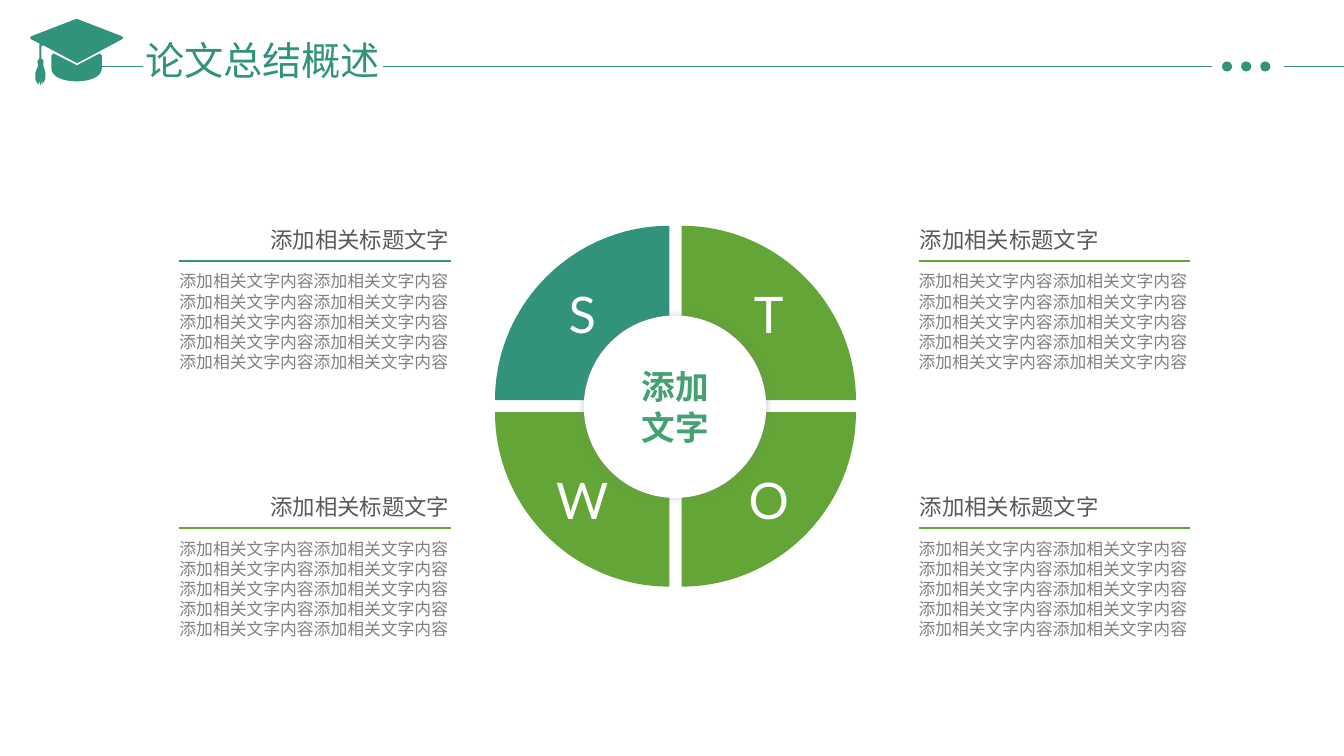
"""Build a SWOT summary slide with a four-part ring and four text blocks."""
import pptx
import pptx.dml.color
import pptx.enum.shapes
import pptx.enum.text
import pptx.oxml
import pptx.oxml.ns
import pptx.util

Inches = pptx.util.Inches
Pt = pptx.util.Pt
RGBColor = pptx.dml.color.RGBColor
ALIGN = pptx.enum.text.PP_ALIGN
OVAL = pptx.enum.shapes.MSO_SHAPE.OVAL

TEAL = RGBColor(0x31, 0x93, 0x7B)
GREEN = RGBColor(0x63, 0xA5, 0x37)
CENTRE_GREEN = RGBColor(0x43, 0xA1, 0x72)
WHITE = RGBColor(0xFF, 0xFF, 0xFF)
DARK_GREY = RGBColor(0x59, 0x59, 0x59)
GREY = RGBColor(0x80, 0x80, 0x80)

TITLE = "论文总结概述"
CENTRE_LINES = ["添加", "文字"]
HEADING = "添加相关标题文字"
BODY_LINES = ["添加相关文字内容添加相关文字内容"] * 5

QUADRANTS = [("S", -1, -1, TEAL), ("T", 1, -1, GREEN), ("O", 1, 1, GREEN), ("W", -1, 1, GREEN)]
RING_CENTRE = (6.7, 4.03)
HALF_GAP = 0.06
RADIUS = 1.73
ARC_HANDLE = 0.55

BLOCK_WIDTH = 2.69
HEADING_WIDTH = 1.8
BLOCKS = [
    (1.78, 2.24, True, TEAL),
    (1.78, 4.89, True, GREEN),
    (9.11, 4.89, False, GREEN),
    (9.11, 2.24, False, GREEN),
]

HEADER_Y = 0.66
HEADER_LINES = [(3.8, 12.02), (1.01, 1.42), (12.74, 13.33)]
DOT_LEFTS = [12.12, 12.31, 12.5]
DOT_SIZE = 0.1

CAP_BASE = [
    (0.51, 0.68), (0.51, 0.85), (1.01, 0.85), (1.01, 0.68), (1.01, 0.55), (0.99, 0.53),
    (0.78, 0.64), (0.76, 0.65), (0.75, 0.64), (0.53, 0.53), (0.51, 0.55),
]
CAP_BRIM = [
    (0.31, 0.39), (0.3, 0.38), (0.31, 0.36), (0.75, 0.19), (0.77, 0.19), (1.21, 0.36),
    (1.22, 0.38), (1.21, 0.39), (0.78, 0.62), (0.76, 0.63), (0.75, 0.62), (0.43, 0.45),
    (0.41, 0.46), (0.41, 0.58), (0.43, 0.6), (0.43, 0.65), (0.45, 0.72), (0.45, 0.78),
    (0.42, 0.84), (0.42, 0.8), (0.4, 0.85), (0.39, 0.8), (0.38, 0.84), (0.35, 0.79),
    (0.35, 0.72), (0.38, 0.65), (0.37, 0.61), (0.39, 0.58), (0.39, 0.43),
]


def style_solid(shape, color):
    shape.shadow.inherit = False
    shape.fill.solid()
    shape.fill.fore_color.rgb = color
    shape.line.fill.background()


def write_lines(shape, lines, size, color, align, font="Arial", asian_font="Lato", bold=None, spacing=None):
    frame = shape.text_frame
    for index, text in enumerate(lines):
        paragraph = frame.add_paragraph() if index else frame.paragraphs[0]
        paragraph.alignment = align
        paragraph.line_spacing = spacing
        run = paragraph.add_run()
        run.text = text
        run.font.size = Pt(size)
        run.font.bold = bold
        run.font.name = font
        run.font.color.rgb = color
        asian = pptx.oxml.parse_xml(f'<a:ea {pptx.oxml.ns.nsdecls("a")} typeface="{asian_font}"/>')
        run.font._element.append(asian)


def clear_margins(frame):
    frame.margin_left = frame.margin_right = frame.margin_top = frame.margin_bottom = 0


def add_text(slide, left, top, width, height, margins=True):
    shape = slide.shapes.add_textbox(Inches(left), Inches(top), Inches(width), Inches(height))
    shape.text_frame.word_wrap = False
    shape.text_frame.auto_size = pptx.enum.text.MSO_AUTO_SIZE.SHAPE_TO_FIT_TEXT
    if not margins:
        clear_margins(shape.text_frame)
    return shape


def add_outline(slide, contours, color, curve_start):
    contours = [[(Inches(x), Inches(y)) for x, y in contour] for contour in contours]
    builder = slide.shapes.build_freeform(*contours[0][0])
    builder.add_line_segments(contours[0][1:])
    for contour in contours[1:]:
        builder.move_to(*contour[0])
        builder.add_line_segments(contour[1:])
    shape = builder.convert_to_shape()
    segments = shape._element.findall(".//" + pptx.oxml.ns.qn("a:lnTo"))
    first, second, third = segments[curve_start:curve_start + 3]
    curve = pptx.oxml.parse_xml(f'<a:cubicBezTo {pptx.oxml.ns.nsdecls("a")}/>')
    first.addprevious(curve)
    for segment in (first, second, third):
        curve.append(segment[0])
        segment.getparent().remove(segment)
    style_solid(shape, color)
    return shape


def add_rule(slide, start, end, y, color, width):
    line = slide.shapes.add_connector(
        pptx.enum.shapes.MSO_CONNECTOR.STRAIGHT, Inches(start), Inches(y), Inches(end), Inches(y))
    line.line.color.rgb = color
    line.line.width = Pt(width)
    line._element.spPr.append(pptx.oxml.parse_xml(f'<a:effectLst {pptx.oxml.ns.nsdecls("a")}/>'))


def add_oval(slide, left, top, size, color):
    shape = slide.shapes.add_shape(OVAL, Inches(left), Inches(top), Inches(size), Inches(size))
    style_solid(shape, color)
    return shape


def add_ring(slide):
    unit_sector = [(0, 0), (1, 0), (1, ARC_HANDLE), (ARC_HANDLE, 1), (0, 1)]
    for letter, across, down, color in QUADRANTS:
        points = [(RING_CENTRE[0] + across * (HALF_GAP + RADIUS * x),
                   RING_CENTRE[1] + down * (HALF_GAP + RADIUS * y)) for x, y in unit_sector]
        sector = add_outline(slide, [points], color, 1)
        sector.text_frame.vertical_anchor = pptx.enum.text.MSO_ANCHOR.MIDDLE
        write_lines(sector, [letter], 36, WHITE, ALIGN.CENTER, font="Lato")

    hub = add_oval(slide, 5.79, 3.13, 1.81, WHITE)
    clear_margins(hub.text_frame)
    hub.text_frame.vertical_anchor = pptx.enum.text.MSO_ANCHOR.MIDDLE
    write_lines(hub, CENTRE_LINES, 24, CENTRE_GREEN, ALIGN.CENTER, bold=True)
    effects = hub._element.spPr.find(pptx.oxml.ns.qn("a:effectLst"))
    effects.append(pptx.oxml.parse_xml(
        f'<a:outerShdw {pptx.oxml.ns.nsdecls("a")} blurRad="{Pt(5)}" dist="0" dir="0" algn="ctr" rotWithShape="0">'
        '<a:srgbClr val="7E8286"><a:alpha val="40000"/></a:srgbClr></a:outerShdw>'))


def add_block(slide, left, top, align_right, color):
    body = add_text(slide, left, top + 0.45, BLOCK_WIDTH, 1.01, margins=False)
    write_lines(body, BODY_LINES, 12, GREY, ALIGN.LEFT)
    heading_left = left + BLOCK_WIDTH - HEADING_WIDTH if align_right else left
    heading = add_text(slide, heading_left, top, HEADING_WIDTH, 0.27, margins=False)
    write_lines(heading, [HEADING], 16, DARK_GREY, ALIGN.CENTER)
    add_rule(slide, left, left + BLOCK_WIDTH, top + 0.35, color, 1.5)


def add_header(slide):
    add_outline(slide, [CAP_BASE, CAP_BRIM], TEAL, 0)
    title = add_text(slide, 1.34, 0.17, 2.56, 0.66)
    write_lines(title, [TITLE], 28, TEAL, ALIGN.LEFT, "Noto Sans CJK SC", "Noto Sans CJK SC", spacing=1.3)
    for start, end in HEADER_LINES:
        add_rule(slide, start, end, HEADER_Y, TEAL, 0.5)
    for left in DOT_LEFTS:
        add_oval(slide, left, HEADER_Y - DOT_SIZE / 2, DOT_SIZE, TEAL)


def main():
    presentation = pptx.Presentation()
    presentation.slide_width = Inches(13.33)
    presentation.slide_height = Inches(7.5)
    slide = presentation.slides.add_slide(presentation.slide_layouts[6])
    add_ring(slide)
    for block in BLOCKS:
        add_block(slide, *block)
    add_header(slide)
    presentation.save("out.pptx")


if __name__ == "__main__":
    main()
